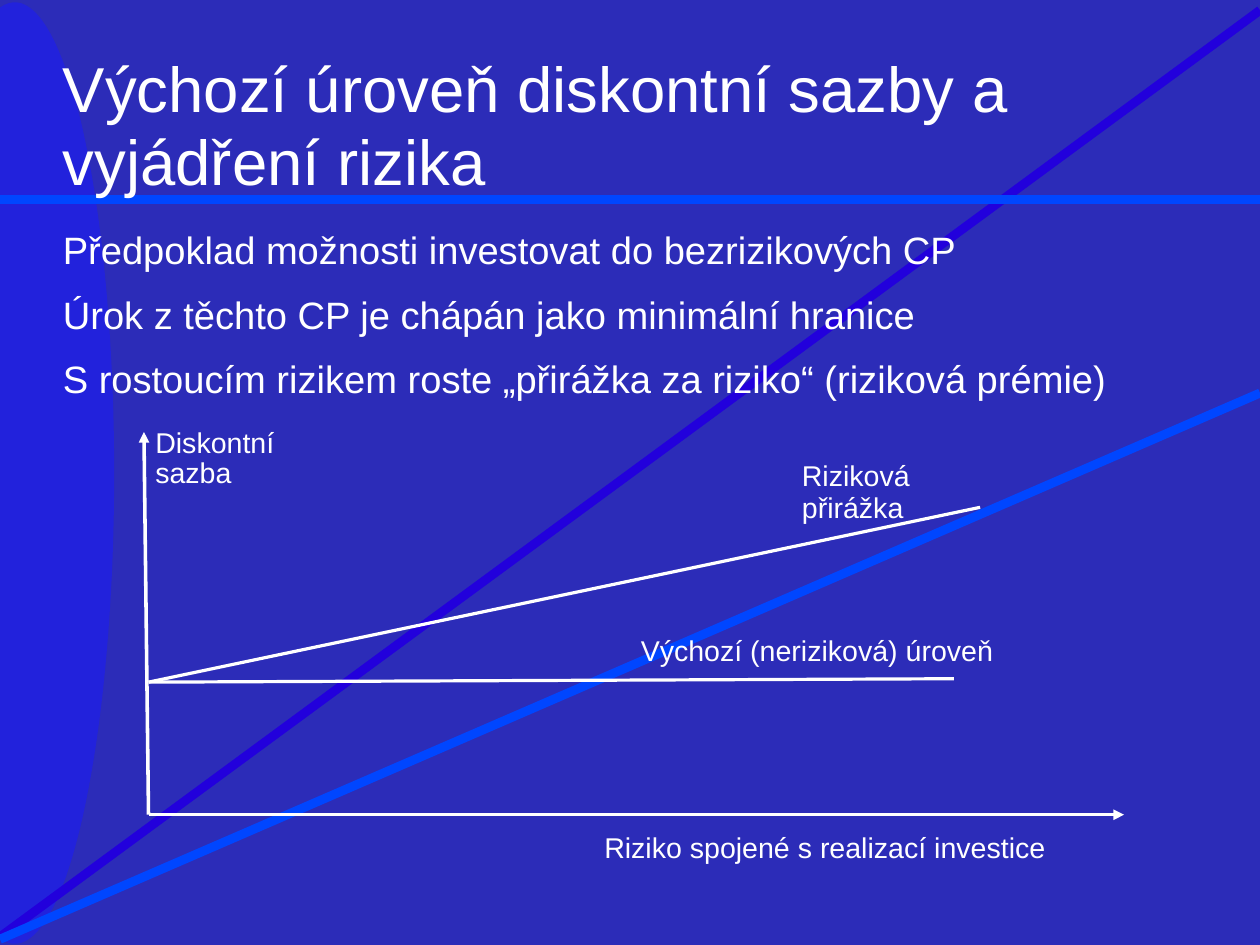
import math

import lxml.etree
import pptx
import pptx.dml.color
import pptx.enum.shapes
import pptx.oxml.ns
import pptx.util

Inches, Pt = pptx.util.Inches, pptx.util.Pt

COLORS = {"background": "2C2CB8", "ellipse": "2222DC", "violet": "2200DC",
          "blue": "0046FF", "white": "FFFFFF"}
FONT = "Arial"
WIDTH, HEIGHT = 11.03, 8.27
ORIGIN = (1.3, 7.13)
BASE_RATE = (1.3, 5.97)
ELLIPSE = {"center": (0.13, 4.14), "radii": (0.87, 4.12), "steps": 80}

# start, end, color, width in points, arrow
DECOR_LINES = [
    ((WIDTH, 0.09), (0, 8.2), "violet", 5.67, False),
    ((WIDTH, 1.75), (0, 1.75), "blue", 5.67, False),
    ((WIDTH, 3.44), (0, 8.22), "blue", 5.67, False),
]
GRAPH_LINES = [
    (ORIGIN, (9.84, 7.13), "white", 2.25, True),
    (BASE_RATE, (8.35, 5.94), "white", 2, False),
    (BASE_RATE, (8.58, 4.44), "white", 2, False),
    (ORIGIN, (1.26, 3.78), "white", 2.25, True),
]
# paragraphs, (left, top, width, height), size, line spacing, space before
TEXTS = [
    (["Výchozí úroveň diskontní sazby a", "vyjádření rizika"],
     (0.55, 0.45, 9.95, 1.29), 40, 46.3, 0),
    (["Předpoklad možnosti investovat do bezrizikových CP",
      "Úrok z těchto CP je chápán jako minimální hranice",
      "S rostoucím rizikem roste „přirážka za riziko“ (riziková prémie)"],
     (0.55, 1.98, 9.95, 1.6), 24, None, 12),
    (["Diskontní", "sazba"], (1.36, 3.76, 1.3, 0.54), 18, 18.9, 0),
    (["Riziková", "přirážka"], (7.02, 4.03, 1.2, 0.56), 18, 20.2, 0),
    (["Výchozí (neriziková) úroveň"], (5.61, 5.54, 3.4, 0.3), 18, None, 0),
    (["Riziko spojené s realizací investice"], (5.29, 7.26, 4.2, 0.3), 18, None, 0),
]


def color(name):
    """Return the named colour."""
    return pptx.dml.color.RGBColor.from_string(COLORS[name])


def add_ellipse(page):
    """Draw the ellipse cut off by the left edge of the slide."""
    (center_x, center_y), (radius_x, radius_y) = ELLIPSE["center"], ELLIPSE["radii"]
    limit = math.acos(-center_x / radius_x)
    steps = ELLIPSE["steps"]
    angles = [limit * (2 * step / steps - 1) for step in range(steps + 1)]
    points = [(Inches(max(0, center_x + radius_x * math.cos(angle))),
               Inches(center_y + radius_y * math.sin(angle))) for angle in angles]
    builder = page.shapes.build_freeform(*points[0])
    builder.add_line_segments(points[1:], close=True)
    shape = builder.convert_to_shape()
    shape.shadow.inherit = False
    shape.fill.solid()
    shape.fill.fore_color.rgb = color("ellipse")
    shape.line.fill.background()


def add_line(page, start, end, name, width, arrow):
    """Draw a straight line, with an arrowhead at its end if asked."""
    connector = page.shapes.add_connector(
        pptx.enum.shapes.MSO_CONNECTOR.STRAIGHT, *map(Inches, start + end))
    connector.line.color.rgb = color(name)
    connector.line.width = Pt(width)
    qualify = pptx.oxml.ns.qn
    if arrow:
        outline = connector.line._get_or_add_ln()
        lxml.etree.SubElement(outline, qualify("a:tailEnd"), type="triangle")
    lxml.etree.SubElement(connector._element.spPr, qualify("a:effectLst"))


def add_text(page, lines, place, size, spacing, before):
    """Add a text box with one paragraph per line."""
    box = page.shapes.add_textbox(*map(Inches, place))
    frame = box.text_frame
    frame.word_wrap = True
    frame.margin_left = frame.margin_right = frame.margin_top = frame.margin_bottom = 0
    frame.text = "\n".join(lines)
    for index, para in enumerate(frame.paragraphs):
        para.font.name = FONT
        para.font.size = Pt(size)
        para.font.color.rgb = color("white")
        para.space_before = Pt(before if index else 0)
        if spacing:
            para.line_spacing = Pt(spacing)


def main():
    """Build the slide and save the deck."""
    deck = pptx.Presentation()
    deck.slide_width, deck.slide_height = Inches(WIDTH), Inches(HEIGHT)
    page = deck.slides.add_slide(deck.slide_layouts[6])
    page.background.fill.solid()
    page.background.fill.fore_color.rgb = color("background")
    add_ellipse(page)
    for line in DECOR_LINES + GRAPH_LINES:
        add_line(page, *line)
    for text in TEXTS:
        add_text(page, *text)
    deck.save("out.pptx")


if __name__ == "__main__":
    main()
